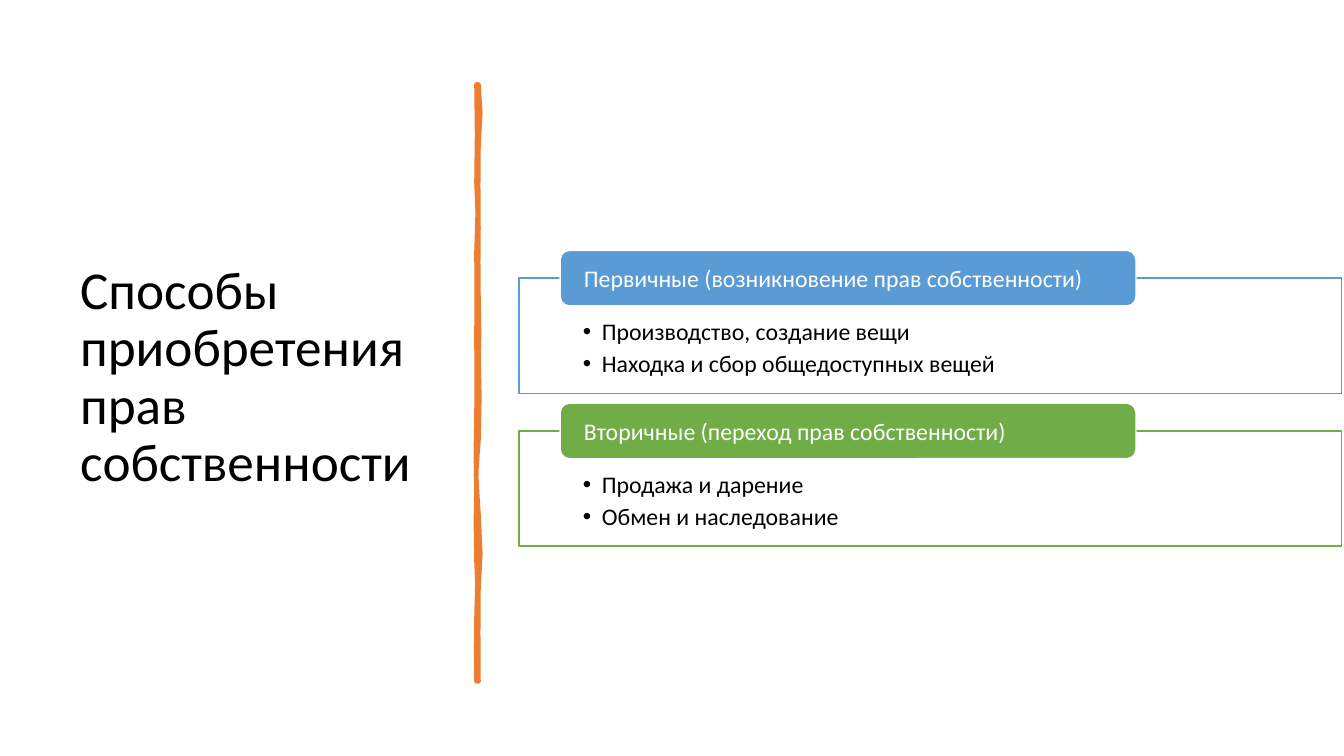
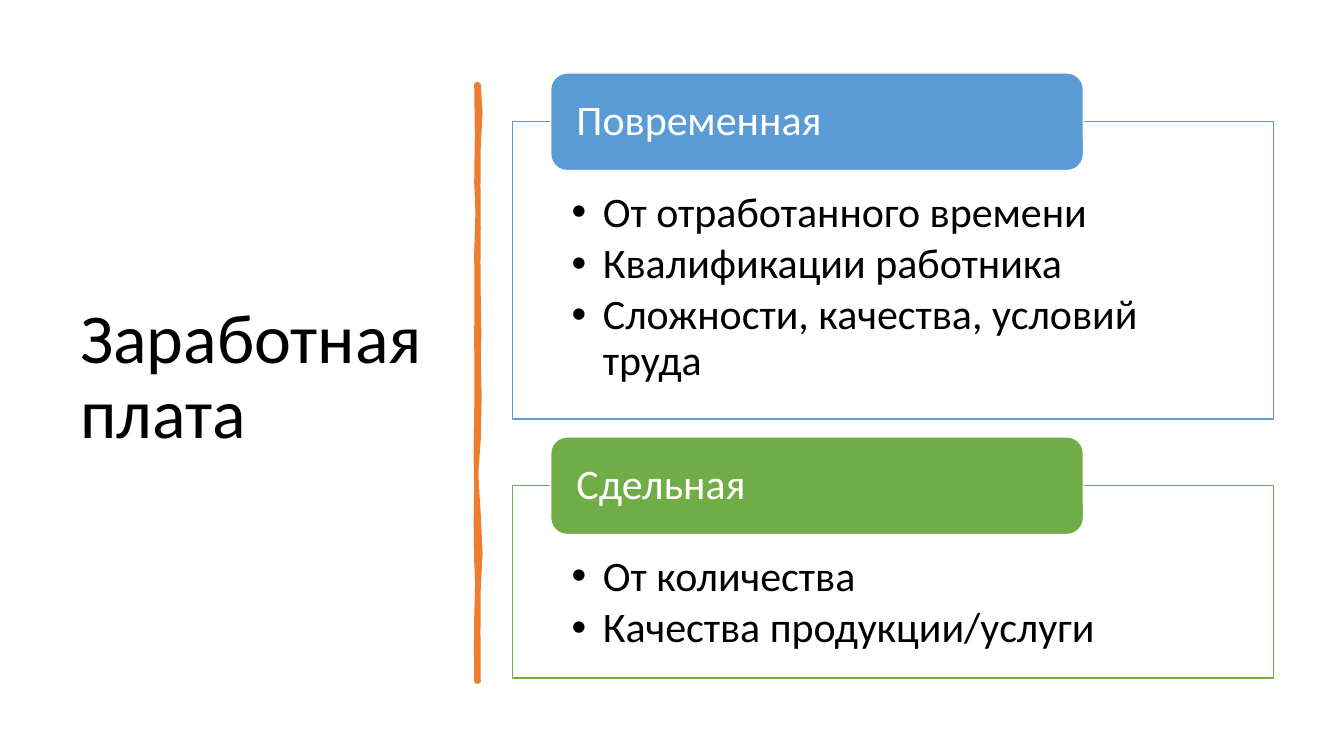
import dataclasses

import lxml.etree
import pptx
import pptx.dml.color
import pptx.enum.shapes
import pptx.enum.text
import pptx.oxml.ns
import pptx.util

Cm = pptx.util.Cm
Pt = pptx.util.Pt
MSO_SHAPE = pptx.enum.shapes.MSO_SHAPE
MSO_ANCHOR = pptx.enum.text.MSO_ANCHOR
PP_ALIGN = pptx.enum.text.PP_ALIGN


def color(value):
    return pptx.dml.color.RGBColor.from_string(value)


@dataclasses.dataclass(frozen=True)
class Theme:
    font = "Calibri"
    bullet_font = "Arial"
    ink = color("000000")
    paper = color("FFFFFF")
    rule = color("ED7D31")
    accents = (color("5B9BD5"), color("70AD47"))
    rule_line = Pt(3.25)
    panel_line = Pt(1)
    title_leading = 0.9


theme = Theme()

# Content; lengths are in centimetres, type sizes in points
slides = [
    dict(
        title="Способы приобретения прав собственности", title_size=38,
        size=17, leading=1.0, hanging=0.48,
        left=13.08, top=7.01, width=20.73, gap=0.95,
        tab_height=1.4, pad_top=0.98,
        panels=[
            ("Первичные (возникновение прав собственности)", 2.9,
             ["Производство, создание вещи",
              "Находка и сбор общедоступных вещей"]),
            ("Вторичные (переход прав собственности)", 2.9,
             ["Продажа и дарение", "Обмен и наследование"]),
        ],
    ),
    dict(
        title="Заработная плата", title_size=50,
        size=30, leading=0.9, hanging=0.79,
        left=12.92, top=3.07, width=19.18, gap=1.68,
        tab_height=2.46, pad_top=1.75,
        panels=[
            ("Повременная", 7.49,
             ["От отработанного времени",
              "Квалификации работника",
              "Сложности, качества, условий труда"]),
            ("Сдельная", 4.85,
             ["От количества", "Качества продукции/услуги"]),
        ],
    ),
]

# Hand-drawn rule: start point, then cubic curves (two handles and an end)
rule_start = (12.06, 2.13)
rule_curves = [
    (12.12, 2.59, 12.12, 3.02, 12.06, 3.71),
    (12.01, 4.39, 12.09, 4.95, 12.06, 5.74),
    (12.04, 6.53, 12.06, 6.65, 12.06, 7.47),
    (12.04, 8.26, 12.12, 8.69, 12.06, 9.04),
    (12.01, 9.4, 12.17, 10.52, 12.06, 11.07),
    (11.96, 11.61, 11.99, 12.29, 12.06, 12.95),
    (12.12, 13.61, 12.12, 14.33, 12.06, 14.83),
    (12.01, 15.32, 12.09, 16.51, 12.06, 17.17),
    (12.04, 17.17, 12.01, 17.17, 12.01, 17.17),
    (12.04, 16.41, 11.96, 16.36, 12.01, 15.57),
    (12.04, 14.81, 12.04, 14.48, 12.01, 14.15),
    (11.99, 13.82, 11.99, 12.57, 12.01, 12.12),
    (12.01, 11.66, 11.96, 11.3, 12.01, 10.54),
    (12.04, 9.8, 11.99, 9.47, 12.01, 8.51),
    (12.04, 7.57, 11.99, 7.14, 12.01, 6.35),
    (12.04, 5.54, 12.06, 5.08, 12.01, 4.6),
    (11.94, 4.14, 12.12, 2.64, 12.01, 2.13),
]

# Each curve becomes two straight pieces, through its middle and its end
rule_points = []
x0, y0 = rule_start
for x1, y1, x2, y2, x3, y3 in rule_curves:
    rule_points.append((Cm((x0 + 3 * x1 + 3 * x2 + x3) / 8),
                        Cm((y0 + 3 * y1 + 3 * y2 + y3) / 8)))
    rule_points.append((Cm(x3), Cm(y3)))
    x0, y0 = x3, y3


def add_text(frame, lines, size, ink, leading, hanging=0):
    """Write one paragraph a line, bulleted where a hanging indent is given."""
    frame.word_wrap = True
    for index, line in enumerate(lines):
        para = frame.add_paragraph() if index else frame.paragraphs[0]
        para.alignment = PP_ALIGN.LEFT
        para.line_spacing = leading
        span = para.add_run()
        span.text = line
        span.font.name = theme.font
        span.font.size = Pt(size)
        span.font.color.rgb = ink
        if hanging:
            para.space_after = Pt(round(size * 0.14, 1))
            props = para._p.get_or_add_pPr()
            props.set("marL", str(Cm(hanging)))
            props.set("indent", str(-Cm(hanging)))
            for tag, key, value in (("a:buFont", "typeface", theme.bullet_font),
                                    ("a:buChar", "char", "•")):
                lxml.etree.SubElement(props, pptx.oxml.ns.qn(tag)).set(key, value)


deck = pptx.Presentation()
deck.slide_width = Cm(33.87)
deck.slide_height = Cm(19.05)

for content in slides:
    page = deck.slides.add_slide(deck.slide_layouts[6])

    # Title
    title = page.shapes.add_textbox(Cm(1.77), Cm(1.77), Cm(9.5), Cm(15.52))
    title.text_frame.vertical_anchor = MSO_ANCHOR.MIDDLE
    add_text(title.text_frame, [content["title"]], content["title_size"],
             theme.ink, theme.title_leading)

    # Vertical rule
    builder = page.shapes.build_freeform(Cm(rule_start[0]), Cm(rule_start[1]))
    builder.add_line_segments(rule_points, close=True)
    rule = builder.convert_to_shape()
    rule.shadow.inherit = False
    rule.fill.solid()
    rule.fill.fore_color.rgb = theme.rule
    rule.line.color.rgb = theme.rule
    rule.line.width = theme.rule_line

    # Panels, each with a tab centred on its top edge
    left, top, width = content["left"], content["top"], content["width"]
    tab_height = content["tab_height"]
    for accent, (heading, height, items) in zip(theme.accents, content["panels"]):
        panel = page.shapes.add_shape(
            MSO_SHAPE.RECTANGLE, Cm(left), Cm(top), Cm(width), Cm(height))
        tab = page.shapes.add_shape(
            MSO_SHAPE.ROUNDED_RECTANGLE, Cm(left + width * 0.05),
            Cm(top - tab_height / 2), Cm(width * 0.7), Cm(tab_height))
        for box, fill, line in ((panel, theme.paper, accent),
                                (tab, accent, theme.paper)):
            box.shadow.inherit = False
            box.fill.solid()
            box.fill.fore_color.rgb = fill
            box.line.color.rgb = line
            box.line.width = theme.panel_line

        body = panel.text_frame
        body.vertical_anchor = MSO_ANCHOR.TOP
        body.margin_left = body.margin_right = Cm(width * 0.08 - 0.05)
        body.margin_top = Cm(content["pad_top"])
        body.margin_bottom = Cm(content["pad_top"] / 3)
        add_text(body, items, content["size"], theme.ink,
                 content["leading"], content["hanging"])

        label = tab.text_frame
        label.vertical_anchor = MSO_ANCHOR.MIDDLE
        label.margin_left = label.margin_right = Cm(0.53)
        label.margin_top = label.margin_bottom = 0
        add_text(label, [heading], content["size"], theme.paper,
                 content["leading"])
        top += height + content["gap"]

deck.save("out.pptx")
